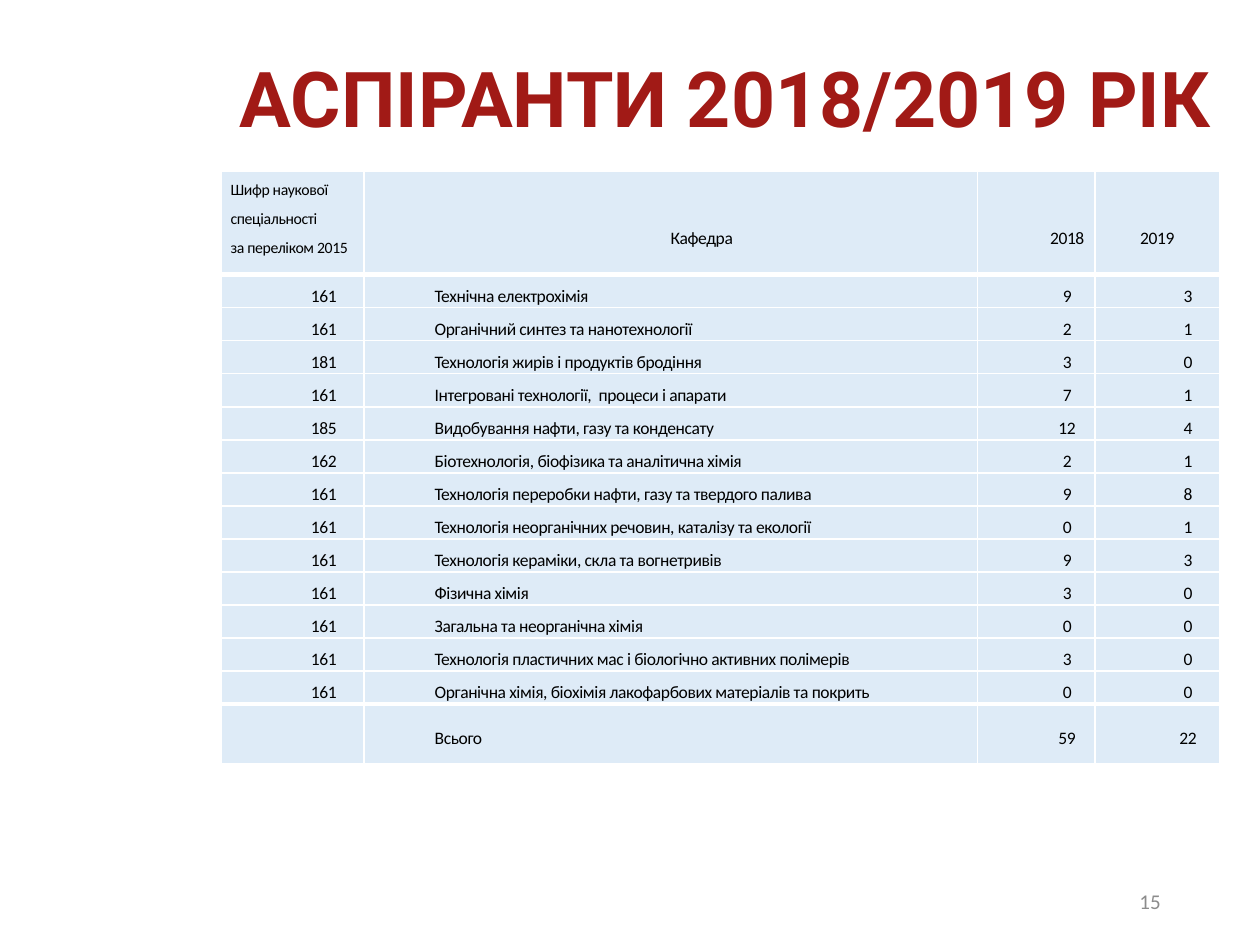
import pptx
import pptx.dml.color
import pptx.enum.text
import pptx.oxml
import pptx.oxml.ns
import pptx.util

Inches = pptx.util.Inches
Pt = pptx.util.Pt
RGBColor = pptx.dml.color.RGBColor
ALIGN = pptx.enum.text.PP_ALIGN
ANCHOR = pptx.enum.text.MSO_ANCHOR

RED = RGBColor(0xA1, 0x1A, 0x16)
PALE_BLUE = RGBColor(0xDE, 0xEB, 0xF7)
WHITE = RGBColor(0xFF, 0xFF, 0xFF)
BLACK = RGBColor(0, 0, 0)
GREY = RGBColor(0x8C, 0x8C, 0x8C)

HEADERS = ["Шифр наукової спеціальності\nза переліком 2015", "Кафедра", "2018", "2019"]
DEPARTMENTS = [
    ("161", "Технічна електрохімія", "9", "3"),
    ("161", "Органічний синтез та нанотехнології", "2", "1"),
    ("181", "Технологія жирів і продуктів бродіння", "3", "0"),
    ("161", "Інтегровані технології,  процеси і апарати", "7", "1"),
    ("185", "Видобування нафти, газу та конденсату", "12", "4"),
    ("162", "Біотехнологія, біофізика та аналітична хімія", "2", "1"),
    ("161", "Технологія переробки нафти, газу та твердого палива", "9", "8"),
    ("161", "Технологія неорганічних речовин, каталізу та екології", "0", "1"),
    ("161", "Технологія кераміки, скла та вогнетривів", "9", "3"),
    ("161", "Фізична хімія", "3", "0"),
    ("161", "Загальна та неорганічна хімія", "0", "0"),
    ("161", "Технологія пластичних мас і біологічно активних полімерів", "3", "0"),
    ("161", "Органічна хімія, біохімія лакофарбових матеріалів та покрить", "0", "0"),
]
TOTAL = ("", "Всього", "59", "22")

COLUMN_WIDTHS = [1.13, 4.87, 0.93, 0.99]
TABLE_HEIGHT, HEADER_HEIGHT, TOTAL_HEIGHT = 4.7, 0.82, 0.47
FIRST_LINE_INDENT = 0.49


def write_text(frame, text, *, size, color=BLACK, font="Calibri", bold=False,
               align=ALIGN.LEFT, line_spacing=None, indent=0, tracking=0):
    """Write one paragraph per line of text; indent is in inches, tracking in points."""
    for index, line in enumerate(text.split("\n")):
        para = frame.add_paragraph() if index else frame.paragraphs[0]
        para.alignment = align
        if line_spacing:
            para.line_spacing = line_spacing
        if indent:
            properties = para._p.get_or_add_pPr()
            properties.set("marL", "0")
            properties.set("indent", str(Inches(indent)))
        span = para.add_run()
        span.text = line
        span.font.size = Pt(size)
        span.font.name = font
        span.font.bold = bold
        span.font.color.rgb = color
        if tracking:
            span._r.get_or_add_rPr().set("spc", str(round(tracking * 100)))


def set_borders(cell, **widths):
    """Draw white borders; widths are in points, keyed by side in L, R, T, B order."""
    namespace = pptx.oxml.ns.nsdecls("a")
    for side, width in widths.items():
        cell._tc.get_or_add_tcPr().append(pptx.oxml.parse_xml(
            f'<a:ln{side} {namespace} w="{Pt(width)}"><a:solidFill>'
            f'<a:srgbClr val="{WHITE}"/></a:solidFill></a:ln{side}>'))


def add_title(slide, text):
    title = slide.shapes.title
    title.left, title.top = Inches(1.67), Inches(0)
    title.width, title.height = Inches(8.33), Inches(1.63)
    title.text_frame.vertical_anchor = ANCHOR.MIDDLE
    write_text(title.text_frame, text, size=44, color=RED, font="Roboto", bold=True,
               align=ALIGN.CENTER, line_spacing=0.9)


def format_cell(cell, text, row, column, last_row):
    set_borders(cell, L=1, R=1, T=3 if row in (1, last_row) else 1,
                B=3 if row in (0, last_row - 1) else 1)
    cell.fill.solid()
    cell.fill.fore_color.rgb = PALE_BLUE
    cell.margin_left = cell.margin_right = Inches(0.07)
    cell.margin_top = cell.margin_bottom = 0
    corner = row == 0 and column == 0
    cell.vertical_anchor = ANCHOR.TOP if corner else ANCHOR.MIDDLE
    if not text:
        return
    left_aligned = corner or (row > 0 and column == 1)
    unindented = row == 0 and column in (0, 3)
    write_text(cell.text_frame, text, size=9 if corner else 10,
               align=ALIGN.LEFT if left_aligned else ALIGN.CENTER, line_spacing=1.5,
               indent=0 if unindented else FIRST_LINE_INDENT, tracking=-0.2)
    if row == 0 and not corner:
        # The header labels sit slightly below the middle of their cells.
        cell.margin_top = Pt(11.5)


def add_postgraduate_table(slide):
    rows = [HEADERS, *DEPARTMENTS, TOTAL]
    table = slide.shapes.add_table(
        len(rows), len(COLUMN_WIDTHS), Inches(1.76), Inches(1.36),
        Inches(sum(COLUMN_WIDTHS)), Inches(TABLE_HEIGHT)).table
    table.first_row = table.horz_banding = False
    for column, width in zip(table.columns, COLUMN_WIDTHS):
        column.width = Inches(width)
    body_height = (TABLE_HEIGHT - HEADER_HEIGHT - TOTAL_HEIGHT) / len(DEPARTMENTS)
    heights = [HEADER_HEIGHT] + [body_height] * len(DEPARTMENTS) + [TOTAL_HEIGHT]
    for row, (values, height) in enumerate(zip(rows, heights)):
        table.rows[row].height = Inches(height)
        for column, text in enumerate(values):
            format_cell(table.cell(row, column), text, row, column, len(rows) - 1)


def add_page_number(slide, number):
    box = slide.shapes.add_textbox(Inches(7.06), Inches(6.95), Inches(2.25), Inches(0.4))
    box.text_frame.word_wrap = True
    box.text_frame.vertical_anchor = ANCHOR.MIDDLE
    write_text(box.text_frame, number, size=12, color=GREY, align=ALIGN.RIGHT)


def main():
    deck = pptx.Presentation()
    deck.slide_width, deck.slide_height = Inches(10), Inches(7.5)
    slide = deck.slides.add_slide(deck.slide_layouts[5])
    add_title(slide, "АСПІРАНТИ 2018/2019 РІК ")
    add_postgraduate_table(slide)
    add_page_number(slide, "15")
    deck.save("out.pptx")


if __name__ == "__main__":
    main()
